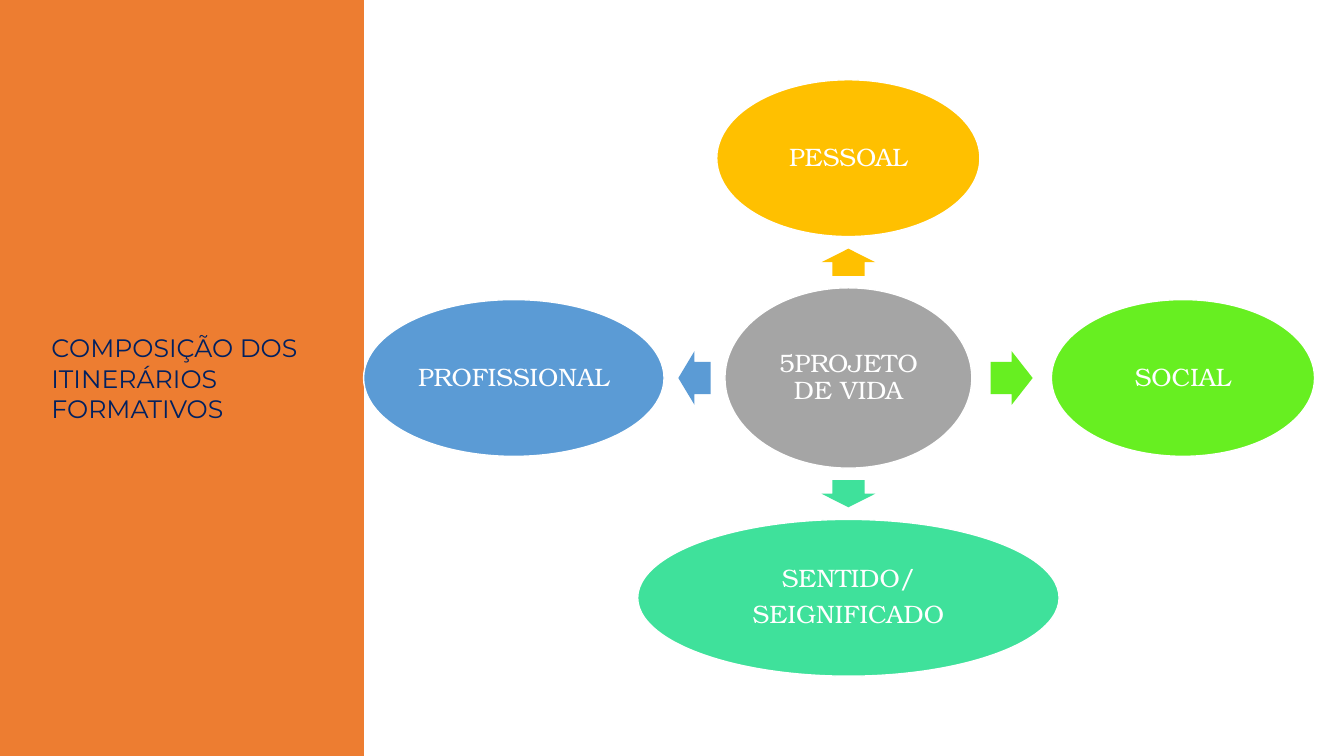
from pptx import Presentation
from pptx.dml.color import RGBColor
from pptx.enum.shapes import MSO_SHAPE as Preset
from pptx.enum.text import MSO_ANCHOR as Anchor, MSO_AUTO_SIZE as AutoSize, PP_ALIGN as Align
from pptx.util import Pt


def color(hex_value):
    return RGBColor.from_string(hex_value)


def apply(target, values):
    for name, value in values.items():
        setattr(target, name, value)


class LifeProjectSlide:
    title_font = {"name": "Montserrat", "size": Pt(18)}
    label_font = {"name": "TeX Gyre Bonum", "size": Pt(18)}
    label_paragraph = {"alignment": Align.CENTER, "line_spacing": 0.9, "space_after": Pt(6.3)}
    title_paragraph = {"alignment": Align.LEFT, "line_spacing": 1.0, "space_before": Pt(0)}
    label_frame = {"word_wrap": True, "vertical_anchor": Anchor.MIDDLE,
                   "margin_left": Pt(2), "margin_right": Pt(2),
                   "margin_top": Pt(2), "margin_bottom": Pt(2)}
    title_frame = {"word_wrap": True, "vertical_anchor": Anchor.TOP,
                   "auto_size": AutoSize.SHAPE_TO_FIT_TEXT}

    def __init__(self, deck):
        self.slide = deck.slides.add_slide(deck.slide_layouts[5])

    def set_text(self, shape, lines, frame, paragraph, font, ink):
        text = shape.text_frame
        text.text = "\n".join(lines)
        apply(text, frame)
        for line in text.paragraphs:
            apply(line, paragraph)
            for run in line.runs:
                apply(run.font, font)
                run.font.color.rgb = color(ink)

    def block(self, preset, center_x, center_y, width, height, fill):
        shape = self.slide.shapes.add_shape(
            preset, Pt(center_x - width / 2), Pt(center_y - height / 2), Pt(width), Pt(height))
        shape.shadow.inherit = False
        shape.fill.solid()
        shape.fill.fore_color.rgb = color(fill)
        shape.line.fill.background()
        return shape

    def title(self, words, left, top, width, height):
        heading = self.slide.shapes.title
        apply(heading, {"left": Pt(left), "top": Pt(top), "width": Pt(width), "height": Pt(height)})
        self.set_text(heading, [words], self.title_frame, self.title_paragraph,
                      self.title_font, "002060")
        # Bring the heading in front of the side panel
        heading.element.getparent().append(heading.element)

    def bubble(self, lines, center_x, center_y, width, height, fill):
        ellipse = self.block(Preset.OVAL, center_x, center_y, width, height, fill)
        ellipse.line.color.rgb = color("FFFFFF")
        ellipse.line.width = Pt(1)
        self.set_text(ellipse, lines, self.label_frame, self.label_paragraph,
                      self.label_font, "FFFFFF")

    def arrow(self, center_x, center_y, length, breadth, rotation, fill):
        pointer = self.block(Preset.RIGHT_ARROW, center_x, center_y, length, breadth, fill)
        pointer.rotation = rotation
        pointer.adjustments[0] = 0.6
        pointer.adjustments[1] = 0.5


def main():
    deck = Presentation()
    apply(deck, {"slide_width": Pt(960), "slide_height": Pt(540)})
    page = LifeProjectSlide(deck)

    # Side panel with the heading
    page.block(Preset.RECTANGLE, 130, 270, 260, 540, "ED7D31")
    page.title("COMPOSIÇÃO DOS ITINERÁRIOS FORMATIVOS", 29.5, 234, 242, 72.7)

    # Central theme
    hub_x, hub_y, hub_width, hub_height = 606, 270, 176.4, 128.8
    page.bubble(["5PROJETO DE VIDA"], hub_x, hub_y, hub_width, hub_height, "A5A5A5")

    # Dimensions around it: lines, direction x and y, rotation, width, fill
    dimensions = [
        (["PESSOAL"], 0, -1, 270, 188, "FFC000"),
        (["SOCIAL"], 1, 0, 0, 188, "67EF21"),
        (["SENTIDO/", "SEIGNIFICADO"], 0, 1, 90, 301, "3FE19B"),
        (["PROFISSIONAL"], -1, 0, 180, 214.6, "5B9BD5"),
    ]
    height = 112
    for lines, dx, dy, rotation, width, fill in dimensions:
        # Each arrow sits midway in the gap and fills 53% of it
        distance = 239 if dx else 157
        inner = (hub_width if dx else hub_height) / 2
        outer = distance - (width if dx else height) / 2
        middle = (inner + outer) / 2
        page.arrow(hub_x + dx * middle, hub_y + dy * middle,
                   0.53 * (outer - inner), 38.4, rotation, fill)
        page.bubble(lines, hub_x + dx * distance, hub_y + dy * distance, width, height, fill)

    deck.save("out.pptx")


if __name__ == "__main__":
    main()
